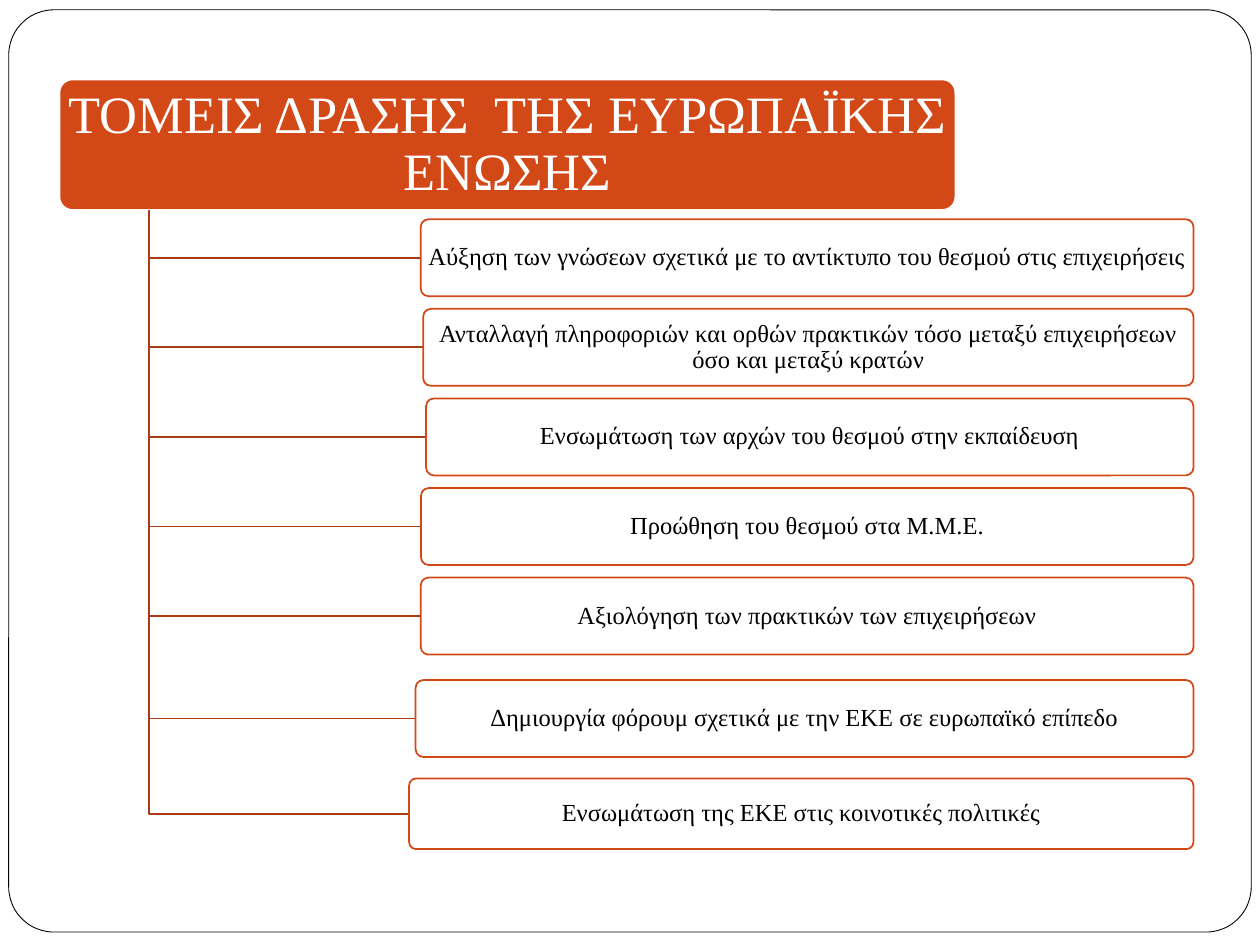
from lxml import etree
from pptx import Presentation
from pptx.dml.color import RGBColor
from pptx.enum import shapes, text
from pptx.oxml.ns import qn
from pptx.util import Pt

TITLE = "ΤΟΜΕΙΣ ΔΡΑΣΗΣ  ΤΗΣ ΕΥΡΩΠΑΪΚΗΣ ΕΝΩΣΗΣ"
# wording, left edge, gap above, height
AREAS = [
    ("Αύξηση των γνώσεων σχετικά με το αντίκτυπο του θεσμού στις επιχειρήσεις", 240.4, 5.3, 44),
    ("Ανταλλαγή πληροφοριών και ορθών πρακτικών τόσο μεταξύ επιχειρήσεων "
     "όσο και μεταξύ κρατών", 241.8, 7.2, 44),
    ("Ενσωμάτωση των αρχών του θεσμού στην εκπαίδευση", 243.5, 7.2, 44),
    ("Προώθηση του θεσμού στα Μ.Μ.Ε.", 240.6, 7.2, 44),
    ("Αξιολόγηση των πρακτικών των επιχειρήσεων", 240.4, 7.2, 44),
    ("Δημιουργία φόρουμ σχετικά με την ΕΚΕ σε ευρωπαϊκό επίπεδο", 237.5, 14.5, 44),
    ("Ενσωμάτωση της ΕΚΕ στις κοινοτικές πολιτικές", 233.8, 12.2, 40.4),
]
COLORS = {"white": "FFFFFF", "black": "000000", "orange": "D34817", "rust": "A93A12"}
FONT = "Times New Roman"
BANNER = (34, 45.4, 512, 74.6)
TRUNK_X = 85
RIGHT = 682


def color(name):
    return RGBColor.from_string(COLORS[name])


def add_rounded(s, box, radius, fill, line, width):
    sp = s.shapes.add_shape(shapes.MSO_SHAPE.ROUNDED_RECTANGLE, *map(Pt, box))
    sp.adjustments[0] = radius
    sp.shadow.inherit = False
    sp.fill.solid()
    sp.fill.fore_color.rgb = color(fill)
    sp.line.color.rgb = color(line)
    sp.line.width = Pt(width)
    return sp


def write(sp, wording, size, font_color, inset):
    tf = sp.text_frame
    tf.text = wording
    tf.word_wrap = True
    tf.auto_size = text.MSO_AUTO_SIZE.NONE
    tf.vertical_anchor = text.MSO_ANCHOR.MIDDLE
    tf.margin_left = tf.margin_right = tf.margin_top = tf.margin_bottom = Pt(inset)
    p = tf.paragraphs[0]
    p.alignment = text.PP_ALIGN.CENTER
    p.line_spacing = 0.9
    font = p.runs[0].font
    font.name, font.size = FONT, Pt(size)
    font.color.rgb = color(font_color)


def add_branch(s, x, y):
    """Draw an elbow from the banner's foot down the trunk to the point x, y."""
    foot = BANNER[1] + BANNER[3]
    builder = s.shapes.build_freeform(Pt(TRUNK_X), Pt(foot))
    builder.add_line_segments([(Pt(TRUNK_X), Pt(y)), (Pt(x), Pt(y))], close=False)
    sp = builder.convert_to_shape()
    sp.shadow.inherit = False
    sp.fill.background()
    sp.line.color.rgb = color("rust")
    sp.line.width = Pt(1)


def set_opacity(sp, percent):
    rgb = sp.element.spPr.find(qn("a:solidFill")).find(qn("a:srgbClr"))
    etree.SubElement(rgb, qn("a:alpha")).set("val", str(percent * 1000))


def main():
    prs = Presentation()
    prs.slide_width, prs.slide_height = Pt(720), Pt(540)
    s = prs.slides.add_slide(prs.slide_layouts[5])

    add_rounded(s, (5, 5.6, 710, 527), 0.049, "white", "black", 0.5)
    add_rounded(s, BANNER, 0.1, "orange", "white", 1)

    title = s.shapes.title
    left, top, width, height = BANNER
    title.left, title.top = Pt(left + 2), Pt(top + 2)
    title.width, title.height = Pt(width - 4), Pt(height - 4)
    write(title, TITLE, 30, "white", 3)
    title.element.getparent().append(title.element)  # in front of the banner

    y = top + height
    for wording, x, gap, height in AREAS:
        y += gap
        add_branch(s, x, y + height / 2)
        sp = add_rounded(s, (x, y, RIGHT - x, height), 0.1, "white", "orange", 1)
        set_opacity(sp, 90)
        write(sp, wording, 14, "black", 2)
        y += height

    prs.save("out.pptx")


if __name__ == "__main__":
    main()
